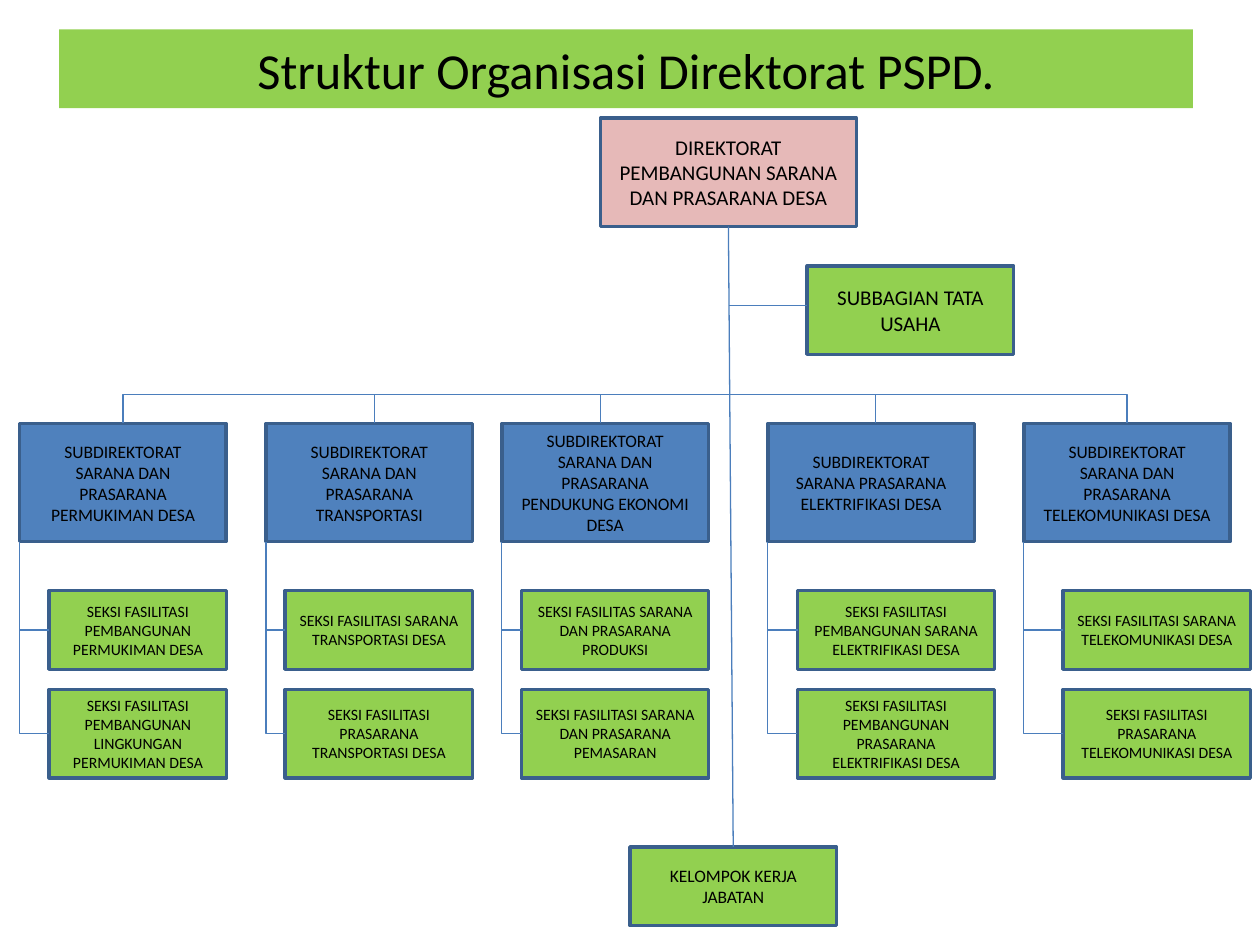
"""Builds the organisation chart of the PSPD directorate as one slide."""
from lxml import etree
from pptx import Presentation
from pptx.dml.color import RGBColor
from pptx.enum.shapes import MSO_CONNECTOR, MSO_SHAPE
from pptx.enum.text import MSO_ANCHOR, PP_ALIGN
from pptx.oxml.ns import qn
from pptx.util import Pt

RECTANGLE = MSO_SHAPE.RECTANGLE
STRAIGHT = MSO_CONNECTOR.STRAIGHT
ELBOW = MSO_CONNECTOR.ELBOW
MIDDLE = MSO_ANCHOR.MIDDLE
CENTER = PP_ALIGN.CENTER
TOP, LEFT, BOTTOM = 0, 1, 2

BLACK = RGBColor(0x00, 0x00, 0x00)
GREEN = RGBColor(0x92, 0xD0, 0x50)
BLUE = RGBColor(0x4F, 0x81, 0xBD)
PINK = RGBColor(0xE6, 0xB9, 0xB8)
BORDER = RGBColor(0x3A, 0x5F, 0x8C)
LINK = RGBColor(0x4B, 0x7E, 0xBC)

SUBDIRECTORATE_TOP, SUBDIRECTORATE_WIDTH, SUBDIRECTORATE_HEIGHT = 242, 118, 67.5
SECTION_ROWS = ((337.5, 45), (394, 50.5))
BUS_TOP, TRUNK_X = 225.5, 417

# left, bus drop, section left, section width, name, sections
SUBDIRECTORATES = (
    (11.25, None, 28, 101.5, "SARANA DAN PRASARANA PERMUKIMAN DESA",
     ("SEKSI FASILITASI PEMBANGUNAN PERMUKIMAN DESA",
      "SEKSI FASILITASI PEMBANGUNAN LINGKUNGAN PERMUKIMAN DESA")),
    (152, 214, 163, 107, "SARANA DAN PRASARANA TRANSPORTASI",
     ("SEKSI FASILITASI SARANA TRANSPORTASI DESA",
      "SEKSI FASILITASI PRASARANA TRANSPORTASI DESA")),
    (286.75, 343, 298, 107, "SARANA DAN PRASARANA PENDUKUNG EKONOMI DESA",
     ("SEKSI FASILITAS SARANA DAN PRASARANA PRODUKSI",
      "SEKSI FASILITASI SARANA DAN PRASARANA PEMASARAN")),
    (438.75, 500.5, 455.75, 112.5, "SARANA PRASARANA ELEKTRIFIKASI DESA",
     ("SEKSI FASILITASI PEMBANGUNAN SARANA ELEKTRIFIKASI DESA",
      "SEKSI FASILITASI PEMBANGUNAN PRASARANA ELEKTRIFIKASI DESA")),
    (585, None, 607.5, 107, "SARANA DAN PRASARANA TELEKOMUNIKASI DESA",
     ("SEKSI FASILITASI SARANA TELEKOMUNIKASI DESA",
      "SEKSI FASILITASI PRASARANA TELEKOMUNIKASI DESA")),
)


def write_text(shape, text, *, size, font="Calibri", color=BLACK, align=CENTER):
    frame = shape.text_frame
    frame.word_wrap = True
    frame.vertical_anchor = MIDDLE
    frame.text = text
    for paragraph in frame.paragraphs:
        paragraph.alignment = align
        paragraph.font.size = Pt(size)
        paragraph.font.name = font
        paragraph.font.color.rgb = color


class OrganisationChart:
    def __init__(self, slide, border_width=2, link_width=0.75):
        self.slide = slide
        self.border_width = border_width
        self.link_width = link_width

    def box(self, left, top, width, height, text, fill=GREEN, size=9, border=BORDER):
        shape = self.slide.shapes.add_shape(
            RECTANGLE, Pt(left), Pt(top), Pt(width), Pt(height))
        shape.shadow.inherit = False
        shape.fill.solid()
        shape.fill.fore_color.rgb = fill
        if border is None:
            shape.line.fill.background()
        else:
            shape.line.color.rgb = border
            shape.line.width = Pt(self.border_width)
        write_text(shape, text, size=size)
        return shape

    def link(self, begin, end, kind=STRAIGHT):
        connector = self.slide.shapes.add_connector(
            kind, *(Pt(value) for value in (*begin, *end)))
        connector.line.color.rgb = LINK
        connector.line.width = Pt(self.link_width)
        etree.SubElement(connector.element.spPr, qn("a:effectLst"))
        return connector

    def corner(self, begin, end):
        connector = self.link(begin, end, ELBOW)
        geometry = connector.element.spPr.find(qn("a:prstGeom"))
        geometry.set("prst", "bentConnector2")
        return connector

    def branch(self, left, drop, section_left, section_width, name, sections):
        self.box(left, SUBDIRECTORATE_TOP, SUBDIRECTORATE_WIDTH, SUBDIRECTORATE_HEIGHT,
                 "SUBDIREKTORAT\n" + name, fill=BLUE, size=10)
        first, second = (
            self.box(section_left, top, section_width, height, text)
            for (top, height), text in zip(SECTION_ROWS, sections))
        if drop is None:
            middle = left + SUBDIRECTORATE_WIDTH / 2
            self.corner((TRUNK_X, BUS_TOP), (middle, SUBDIRECTORATE_TOP))
        else:
            self.link((drop, BUS_TOP), (drop, SUBDIRECTORATE_TOP))
        first_middle = (first.top + first.height / 2) / Pt(1)
        second_middle = (second.top + second.height / 2) / Pt(1)
        self.corner((section_left, second_middle),
                    (left, SUBDIRECTORATE_TOP + SUBDIRECTORATE_HEIGHT))
        side = self.link((section_left, first_middle), (left, first_middle))
        side.begin_connect(first, LEFT)


def main():
    presentation = Presentation()
    presentation.slide_width, presentation.slide_height = Pt(720), Pt(540)
    slide = presentation.slides.add_slide(presentation.slide_layouts[6])
    chart = OrganisationChart(slide)

    chart.box(33.75, 16.88, 648, 45, "Struktur Organisasi Direktorat PSPD.",
              size=28.8, border=None)
    director = chart.box(343.13, 67.5, 146.25, 62,
                         "DIREKTORAT PEMBANGUNAN SARANA DAN PRASARANA DESA",
                         fill=PINK, size=12)
    chart.box(461.25, 152, 118, 50.5, "SUBBAGIAN TATA USAHA", size=12)
    working_group = chart.box(360, 484, 118, 45, "KELOMPOK KERJA JABATAN", size=10)

    trunk = chart.link((416, 129.5), (419, 484))
    trunk.begin_connect(director, BOTTOM)
    trunk.end_connect(working_group, TOP)
    chart.link((416.5, 174.5), (461.25, 174.5))
    for subdirectorate in SUBDIRECTORATES:
        chart.branch(*subdirectorate)

    presentation.save("out.pptx")


if __name__ == "__main__":
    main()
